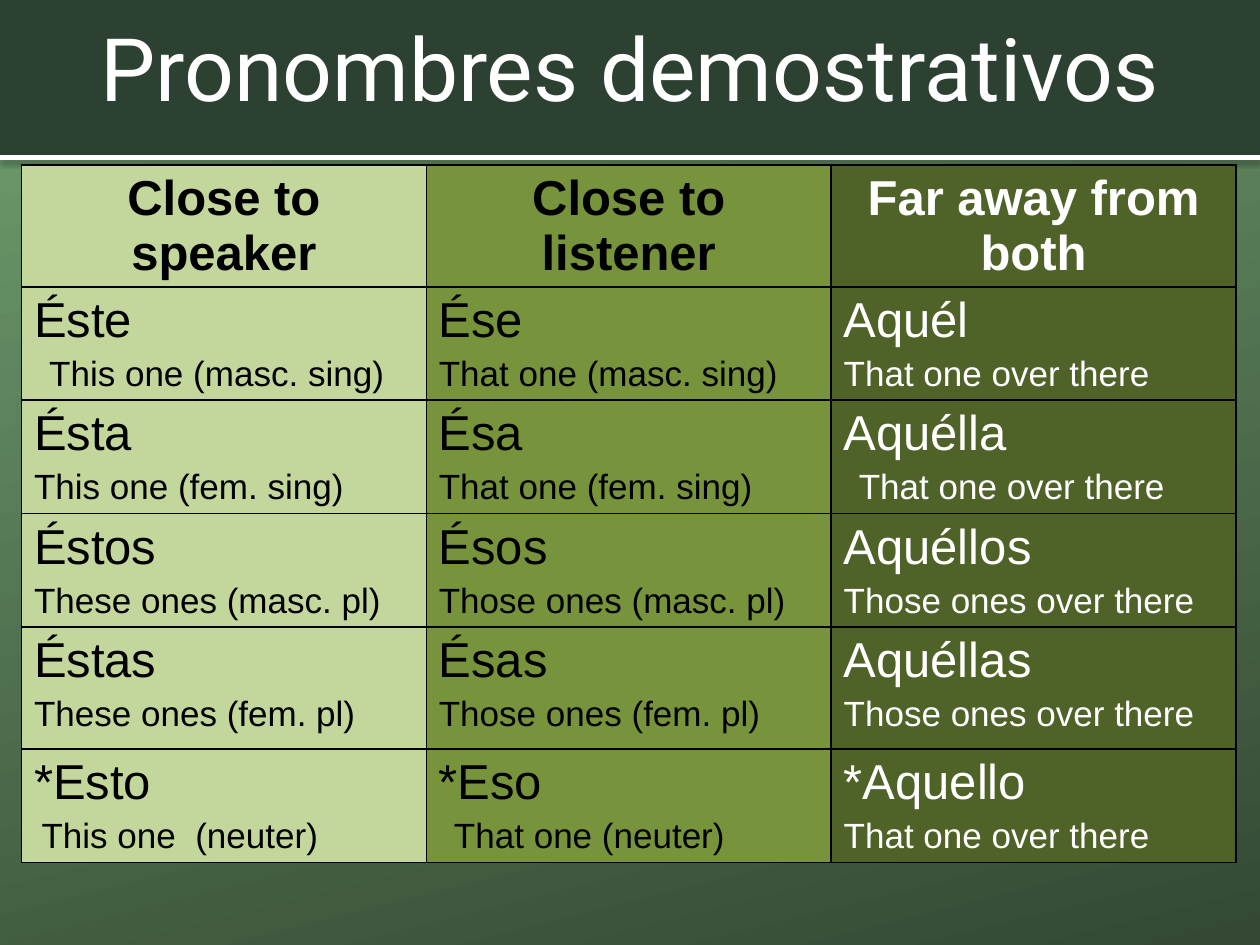
from dataclasses import dataclass

from lxml.etree import SubElement
from pptx import Presentation
from pptx.dml.color import RGBColor
from pptx.enum.shapes import MSO_CONNECTOR, MSO_SHAPE
from pptx.enum.text import MSO_ANCHOR, MSO_AUTO_SIZE, PP_ALIGN
from pptx.oxml.ns import qn
from pptx.util import Inches, Pt


@dataclass(frozen=True)
class Theme:
    band: str = "2C4132"
    white: str = "FFFFFF"
    black: str = "000000"
    backdrop: tuple = ("70A06F", "344834")
    backdrop_angle: int = 284
    # fill and text colour of each table column
    columns: tuple = (("C3D69B", "000000"), ("77933C", "000000"), ("4F6228", "FFFFFF"))
    title_font: str = "Roboto"
    table_font: str = "Arial"
    title_size: int = 50
    word_size: int = 28
    meaning_size: int = 20


THEME = Theme()
WIDTH, HEIGHT = Inches(10), Inches(7.5)
SPACE = Inches(0.06)  # one step of indent before a meaning

HEADINGS = ("Close to speaker", "Close to listener", "Far away from both")
# Each pronoun: word, meaning, indent steps
PRONOUNS = (
    (("Éste", "This one (masc. sing)", 2), ("Ése", "That one (masc. sing)", 0),
     ("Aquél", "That one over there", 0)),
    (("Ésta", "This one (fem. sing)", 0), ("Ésa", "That one (fem. sing)", 0),
     ("Aquélla", "That one over there", 2)),
    (("Éstos", "These ones (masc. pl)", 0), ("Ésos", "Those ones (masc. pl)", 0),
     ("Aquéllos", "Those ones over there", 0)),
    (("Éstas", "These ones (fem. pl)", 0), ("Ésas", "Those ones (fem. pl)", 0),
     ("Aquéllas", "Those ones over there", 0)),
    (("*Esto", "This one  (neuter)", 1), ("*Eso", "That one (neuter)", 2),
     ("*Aquello", "That one over there", 0)),
)
ROW_HEIGHTS = (0.89, 0.89, 0.89, 0.89, 0.97, 0.89)


def rgb(color):
    return RGBColor.from_string(color)


def style_runs(paragraph, font, size, color, bold=False):
    for run in paragraph.runs:
        run.font.name = font
        run.font.size = Pt(size)
        run.font.bold = bold
        run.font.color.rgb = rgb(color)


def paint_backdrop(slide):
    fill = slide.background.fill
    fill.gradient()
    fill.gradient_angle = THEME.backdrop_angle
    for stop, color, position in zip(fill.gradient_stops, THEME.backdrop, (0, 1)):
        stop.color.rgb = rgb(color)
        stop.position = position


def add_rule_shadow(rule):
    effects = SubElement(rule._element.spPr, qn("a:effectLst"))
    shadow = SubElement(effects, qn("a:outerShdw"), blurRad=str(Pt(3.1)),
                        dist=str(Pt(1.6)), dir="5400000", rotWithShape="0")
    color = SubElement(shadow, qn("a:srgbClr"), val=THEME.black)
    SubElement(color, qn("a:alpha"), val="38000")


def build_header(slide, left, top, width, height):
    # Dark band
    band = slide.shapes.add_shape(MSO_SHAPE.RECTANGLE, left, top, width, height)
    band.shadow.inherit = False
    band.fill.solid()
    band.fill.fore_color.rgb = rgb(THEME.band)
    band.line.fill.background()

    # White rule along the bottom of the band
    bottom = top + height
    rule = slide.shapes.add_connector(MSO_CONNECTOR.STRAIGHT, left, bottom, left + width, bottom)
    rule.line.color.rgb = rgb(THEME.white)
    rule.line.width = Pt(3)
    add_rule_shadow(rule)

    # Title, brought in front of the band
    title = slide.shapes.title
    title.left, title.top, title.width, title.height = left, top, width, int(height * 0.85)
    frame = title.text_frame
    frame.text = "Pronombres demostrativos"
    frame.word_wrap = True
    frame.auto_size = MSO_AUTO_SIZE.NONE
    frame.vertical_anchor = MSO_ANCHOR.MIDDLE
    heading = frame.paragraphs[0]
    heading.alignment = PP_ALIGN.CENTER
    style_runs(heading, THEME.title_font, THEME.title_size, THEME.white)
    slide.shapes._spTree.append(title._element)


def space_before(paragraph, indent=0):
    properties = paragraph._p.get_or_add_pPr()
    if indent:
        properties.set("marL", str(indent))
        properties.set("indent", "0")
    spacing = SubElement(properties, qn("a:spcBef"))
    SubElement(spacing, qn("a:spcPct"), val="20000")


def frame_cell(cell, color):
    properties = cell._tc.get_or_add_tcPr()
    for position, side in enumerate(("a:lnL", "a:lnR", "a:lnT", "a:lnB")):
        border = SubElement(properties, qn(side), w=str(Pt(1)))
        SubElement(SubElement(border, qn("a:solidFill")), qn("a:srgbClr"), val=color)
        properties.insert(position, border)  # borders come before the fill


def write_heading(cell, text, color):
    cell.text_frame.text = text
    heading = cell.text_frame.paragraphs[0]
    heading.alignment = PP_ALIGN.CENTER
    space_before(heading)
    style_runs(heading, THEME.table_font, THEME.word_size, color, bold=True)


def write_pronoun(cell, pronoun, color):
    word, meaning, steps = pronoun
    cell.text_frame.text = f"{word}\n{meaning}"
    word_line, meaning_line = cell.text_frame.paragraphs
    space_before(word_line)
    space_before(meaning_line, steps * SPACE)
    style_runs(word_line, THEME.table_font, THEME.word_size, color)
    style_runs(meaning_line, THEME.table_font, THEME.meaning_size, color)


def build_pronoun_table(slide, left, top, width, height):
    rows = (HEADINGS,) + PRONOUNS
    table = slide.shapes.add_table(len(rows), len(HEADINGS), left, top, width, height).table
    table.first_row = False
    table.horz_banding = False
    for column in table.columns:
        column.width = width // len(HEADINGS)
    for row, share in zip(table.rows, ROW_HEIGHTS):
        row.height = int(height * share / sum(ROW_HEIGHTS))

    for r, entries in enumerate(rows):
        write = write_pronoun if r else write_heading
        for c, (entry, (fill, color)) in enumerate(zip(entries, THEME.columns)):
            cell = table.cell(r, c)
            cell.fill.solid()
            cell.fill.fore_color.rgb = rgb(fill)
            frame_cell(cell, THEME.black)
            write(cell, entry, color)


def main():
    presentation = Presentation()
    presentation.slide_width, presentation.slide_height = WIDTH, HEIGHT
    slide = presentation.slides.add_slide(presentation.slide_layouts[5])
    paint_backdrop(slide)
    build_header(slide, 0, 0, WIDTH, HEIGHT // 6)
    build_pronoun_table(slide, Inches(0.17), Inches(1.31), Inches(9.64), Inches(sum(ROW_HEIGHTS)))
    presentation.save("out.pptx")


if __name__ == "__main__":
    main()
